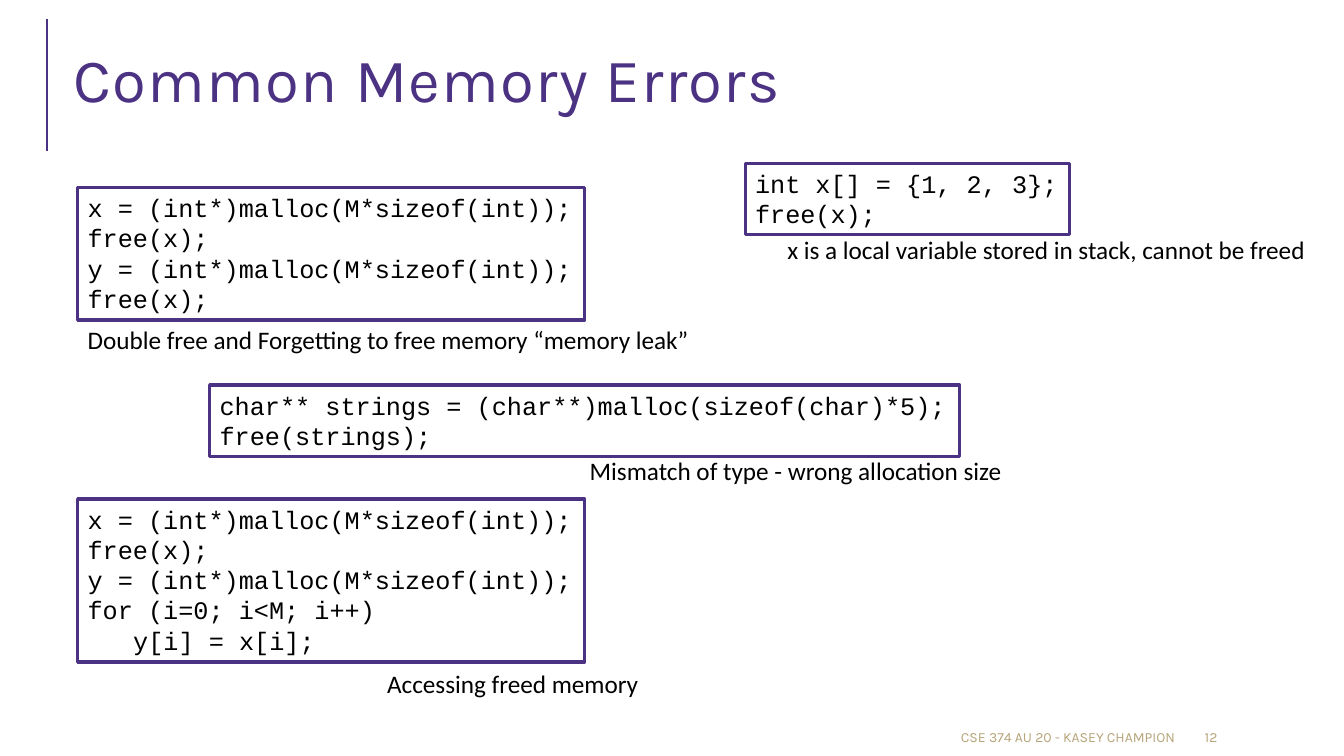
import dataclasses

import lxml.etree
import pptx
import pptx.dml.color
import pptx.enum.shapes
import pptx.enum.text
import pptx.util

PAGE_WIDTH = pptx.util.Inches(13.33)
PAGE_HEIGHT = pptx.util.Inches(7.5)
PURPLE, GOLD, BLACK = "4C3282", "B6A479", "000000"
LINE_ROWS, PADDING_ROWS = 4.04, 1.37
INDENT_COLUMNS = 1.13
LEFT = pptx.enum.text.PP_ALIGN.LEFT
RIGHT = pptx.enum.text.PP_ALIGN.RIGHT
TOP = pptx.enum.text.MSO_ANCHOR.TOP
MIDDLE = pptx.enum.text.MSO_ANCHOR.MIDDLE


@dataclasses.dataclass(frozen=True)
class Snippet:
    left: float
    top: float
    width: float
    code: str


@dataclasses.dataclass(frozen=True)
class Caption:
    left: float
    top: float
    width: float
    text: str
    wrap: bool = False
    lines: int = 1


@dataclasses.dataclass(frozen=True)
class FooterItem:
    left: float
    width: float
    text: str
    align: pptx.enum.text.PP_ALIGN


SNIPPETS = [
    Snippet(55.44, 21.6, 24.16, "int x[] = {1, 2, 3};\nfree(x);"),
    Snippet(15.6, 50.93, 55.81,
            "char** strings = (char**)malloc(sizeof(char)*5);\nfree(strings);"),
    Snippet(5.78, 24.8, 37.73,
            "x = (int*)malloc(M*sizeof(int));\nfree(x);\n"
            "y = (int*)malloc(M*sizeof(int));\nfree(x);"),
    Snippet(5.78, 66, 37.73,
            "x = (int*)malloc(M*sizeof(int));\nfree(x);\n"
            "y = (int*)malloc(M*sizeof(int));\nfor (i=0; i<M; i++)\n\ty[i] = x[i];"),
]
CAPTIONS = [
    Caption(57.84, 30.4, 40.96, "x is a local variable stored in stack, cannot be freed"),
    Caption(5.78, 42.27, 50.71, "Double free and Forgetting to free memory “memory leak”",
            wrap=True, lines=2),
    Caption(28.06, 87.73, 20.4, "Accessing freed memory"),
    Caption(43.14, 59.6, 38.03, "Mismatch of type - wrong allocation size", wrap=True),
]
FOOTER = [
    FooterItem(88.9, 7.95, "12", LEFT),
    FooterItem(39.76, 48.39, "CSE 374 AU 20 - KASEY CHAMPION", RIGHT),
]


def columns(count: float) -> int:
    return round(PAGE_WIDTH * count / 100)


def rows(count: float) -> int:
    return round(PAGE_HEIGHT * count / 100)


def text_rows(lines: int) -> float:
    return lines * LINE_ROWS + PADDING_ROWS


def color(value: str) -> pptx.dml.color.RGBColor:
    return pptx.dml.color.RGBColor.from_string(value)


def write(shape, text: str, *, font: str, size: float, ink: str, align=LEFT,
          anchor=TOP, wrap: bool = True, grow: bool = False,
          line_spacing: float | None = None, tracking: int = 0) -> None:
    frame = shape.text_frame
    frame.word_wrap = wrap
    frame.vertical_anchor = anchor
    sizing = pptx.enum.text.MSO_AUTO_SIZE
    frame.auto_size = sizing.SHAPE_TO_FIT_TEXT if grow else sizing.NONE
    for index, line in enumerate(text.split("\n")):
        para = frame.add_paragraph() if index else frame.paragraphs[0]
        para.alignment = align
        if line_spacing:
            para.line_spacing = line_spacing
        if line.startswith("\t"):
            properties = para._p.get_or_add_pPr()
            properties.set("marL", str(columns(INDENT_COLUMNS * 3)))
            properties.set("indent", "0")
        span = para.add_run()
        span.text = line.lstrip("\t")
        span.font.name = font
        span.font.size = pptx.util.Pt(size)
        span.font.color.rgb = color(ink)
        if tracking:
            span._r.get_or_add_rPr().set("spc", str(tracking))


def draw_title(page, text: str) -> None:
    rule = page.shapes.add_connector(
        pptx.enum.shapes.MSO_CONNECTOR.STRAIGHT,
        columns(3.53), rows(20), columns(3.53), rows(2.53))
    rule.line.color.rgb = color(PURPLE)
    rule.line.width = pptx.util.Pt(1.5)
    lxml.etree.SubElement(rule._element.spPr, pptx.oxml.ns.qn("a:effectLst"))
    title = page.shapes.title
    title.left, title.top = columns(4.73), rows(3.87)
    title.width, title.height = columns(91.75), rows(14.8)
    write(title, text, font="Karla", size=44, ink=PURPLE, anchor=MIDDLE,
          line_spacing=0.8, tracking=100)


def draw_snippet(page, snippet: Snippet) -> None:
    lines = snippet.code.count("\n") + 1
    box = page.shapes.add_shape(
        pptx.enum.shapes.MSO_SHAPE.RECTANGLE, columns(snippet.left),
        rows(snippet.top), columns(snippet.width), rows(text_rows(lines)))
    box.shadow.inherit = False
    box.fill.background()
    box.line.color.rgb = color(PURPLE)
    box.line.width = pptx.util.Pt(2.25)
    write(box, snippet.code, font="Courier New", size=18, ink=BLACK,
          wrap=False, grow=True)


def draw_caption(page, caption: Caption) -> None:
    box = page.shapes.add_textbox(
        columns(caption.left), rows(caption.top), columns(caption.width),
        rows(text_rows(caption.lines)))
    write(box, caption.text, font="Calibri", size=18, ink=BLACK,
          wrap=caption.wrap, grow=True)


def draw_footer_item(page, item: FooterItem) -> None:
    box = page.shapes.add_textbox(
        columns(item.left), rows(95.47), columns(item.width), rows(4))
    write(box, item.text, font="Karla", size=10, ink=GOLD, align=item.align,
          anchor=MIDDLE)


def main() -> None:
    deck = pptx.Presentation()
    deck.slide_width, deck.slide_height = PAGE_WIDTH, PAGE_HEIGHT
    page = deck.slides.add_slide(deck.slide_layouts.get_by_name("Title Only"))
    draw_title(page, "Common Memory Errors")
    for item in FOOTER:
        draw_footer_item(page, item)
    for snippet in SNIPPETS:
        draw_snippet(page, snippet)
    for caption in CAPTIONS:
        draw_caption(page, caption)
    deck.save("out.pptx")


if __name__ == "__main__":
    main()
